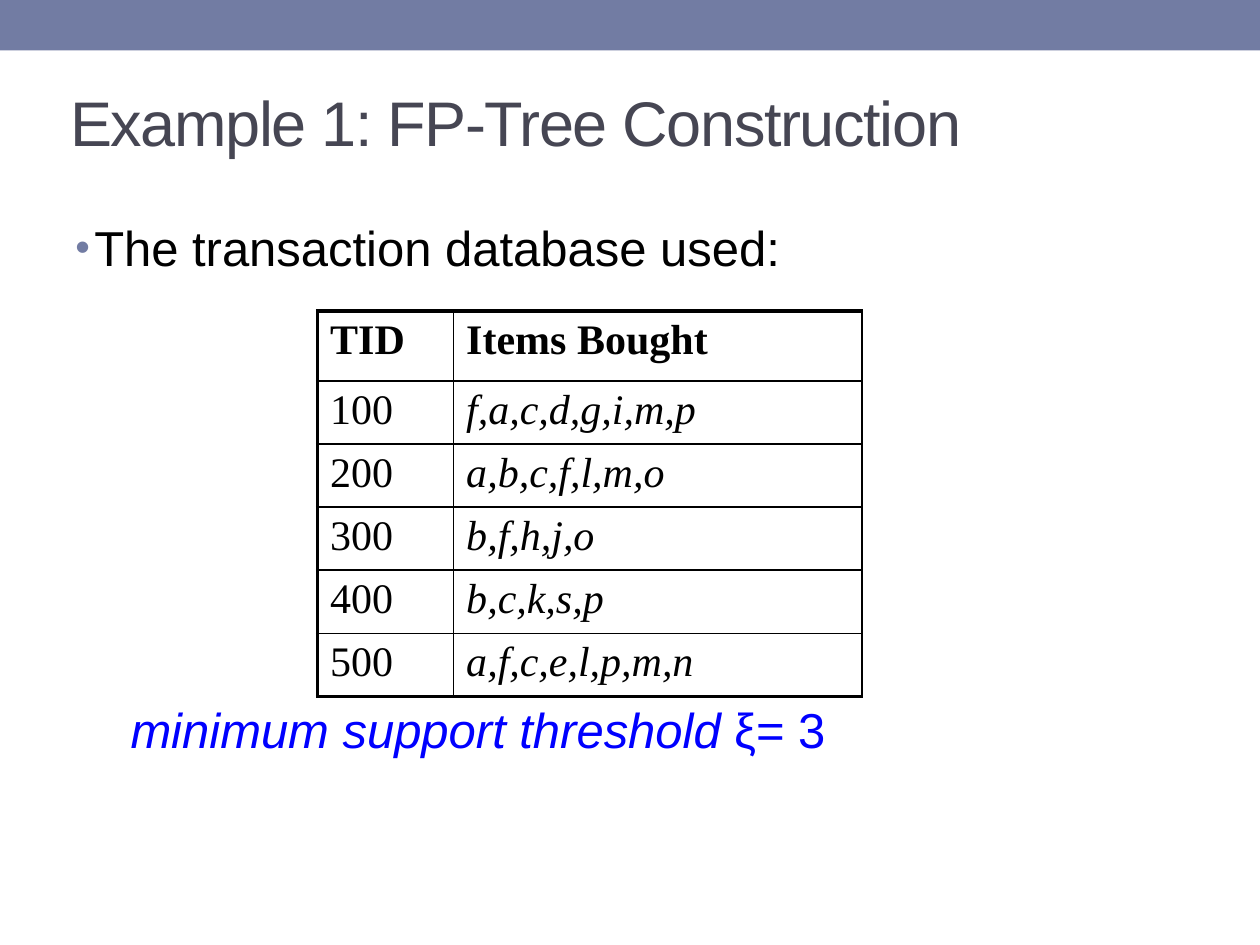
"""Build a slide showing the transaction database for an FP-tree example."""
from dataclasses import dataclass

from lxml.etree import SubElement
from pptx import Presentation
from pptx.dml.color import RGBColor
from pptx.enum.shapes import MSO_SHAPE
from pptx.enum.text import MSO_ANCHOR
from pptx.oxml.ns import qn
from pptx.util import Pt


@dataclass(frozen=True)
class Theme:
    accent: str = "727CA3"
    title: str = "464653"
    ink: str = "000000"
    blue: str = "0000FF"
    sans: str = "Arial"
    serif: str = "Times New Roman"
    title_size: float = 36
    body_size: float = 28
    table_size: float = 24
    thin: float = 1
    thick: float = 2.25


THEME = Theme()
COLUMNS = (77.75, 233.25)
HEADER_HEIGHT, ROW_HEIGHT = 40, 33.8
TRANSACTIONS = (
    ("TID", "Items Bought"),
    ("100", "f,a,c,d,g,i,m,p"),
    ("200", "a,b,c,f,l,m,o"),
    ("300", "b,f,h,j,o"),
    ("400", "b,c,k,s,p"),
    ("500", "a,f,c,e,l,p,m,n"),
)


def add_run(p, text, font, size, color, bold=False, italic=False):
    r = p.add_run()
    r.text = text
    r.font.name = font
    r.font.size = Pt(size)
    r.font.color.rgb = RGBColor.from_string(color)
    r.font.bold = bold
    r.font.italic = italic
    return r


def add_band(s, width, height):
    sp = s.shapes.add_shape(MSO_SHAPE.RECTANGLE, 0, 0, Pt(width), Pt(height))
    sp.shadow.inherit = False
    sp.fill.solid()
    sp.fill.fore_color.rgb = RGBColor.from_string(THEME.accent)
    sp.line.fill.background()


def add_text_box(s, left, top, width, height, anchor=MSO_ANCHOR.TOP):
    tf = s.shapes.add_textbox(Pt(left), Pt(top), Pt(width), Pt(height)).text_frame
    tf.word_wrap = True
    tf.vertical_anchor = anchor
    return tf.paragraphs[0]


def set_bullet(p, indent):
    pPr = p._p.get_or_add_pPr()
    pPr.set("marL", str(Pt(indent)))
    pPr.set("indent", str(-Pt(indent)))
    SubElement(SubElement(pPr, qn("a:buClr")), qn("a:srgbClr"), val=THEME.accent)
    SubElement(pPr, qn("a:buSzPct"), val="85000")
    SubElement(pPr, qn("a:buFont"), typeface=THEME.sans)
    SubElement(pPr, qn("a:buChar"), char="•")


def set_borders(cell, widths):
    tcPr = cell._tc.get_or_add_tcPr()
    for side, width in zip("LRTB", widths):
        ln = SubElement(tcPr, qn(f"a:ln{side}"), w=str(Pt(width)))
        SubElement(SubElement(ln, qn("a:solidFill")), qn("a:srgbClr"), val=THEME.ink)


def add_transactions(s, left, top):
    last = len(TRANSACTIONS) - 1
    height = HEADER_HEIGHT + last * ROW_HEIGHT
    table = s.shapes.add_table(len(TRANSACTIONS), len(COLUMNS), Pt(left), Pt(top),
                               Pt(sum(COLUMNS)), Pt(height)).table
    table.first_row = table.horz_banding = False
    for column, width in zip(table.columns, COLUMNS):
        column.width = Pt(width)
    for i, values in enumerate(TRANSACTIONS):
        table.rows[i].height = Pt(ROW_HEIGHT if i else HEADER_HEIGHT)
        for j, value in enumerate(values):
            cell = table.cell(i, j)
            set_borders(cell, (THEME.thin if j else THEME.thick, THEME.thin,
                               THEME.thin if i else THEME.thick,
                               THEME.thick if i == last else THEME.thin))
            cell.fill.background()
            add_run(cell.text_frame.paragraphs[0], value, THEME.serif, THEME.table_size,
                    THEME.ink, bold=i == 0, italic=i > 0 and j == 1)


def main():
    prs = Presentation()
    prs.slide_width, prs.slide_height = Pt(720), Pt(540)
    s = prs.slides.add_slide(prs.slide_layouts[6])
    add_band(s, 720, 28.8)

    p = add_text_box(s, 33, 45.5, 654, 48, MSO_ANCHOR.MIDDLE)
    r = add_run(p, "Example 1: FP-Tree Construction", THEME.sans, THEME.title_size, THEME.title)
    r.font._element.set("spc", "-80")

    p = add_text_box(s, 36, 121, 662, 40)
    set_bullet(p, 10.8)
    add_run(p, "The transaction database used:", THEME.sans, THEME.body_size, THEME.ink)

    add_transactions(s, 181.5, 177.75)

    p = add_text_box(s, 67.5, 396, 600, 40)
    add_run(p, "minimum support threshold", THEME.sans, THEME.body_size, THEME.blue, italic=True)
    add_run(p, " ξ= 3", THEME.sans, THEME.body_size, THEME.blue)
    prs.save("out.pptx")


if __name__ == "__main__":
    main()
